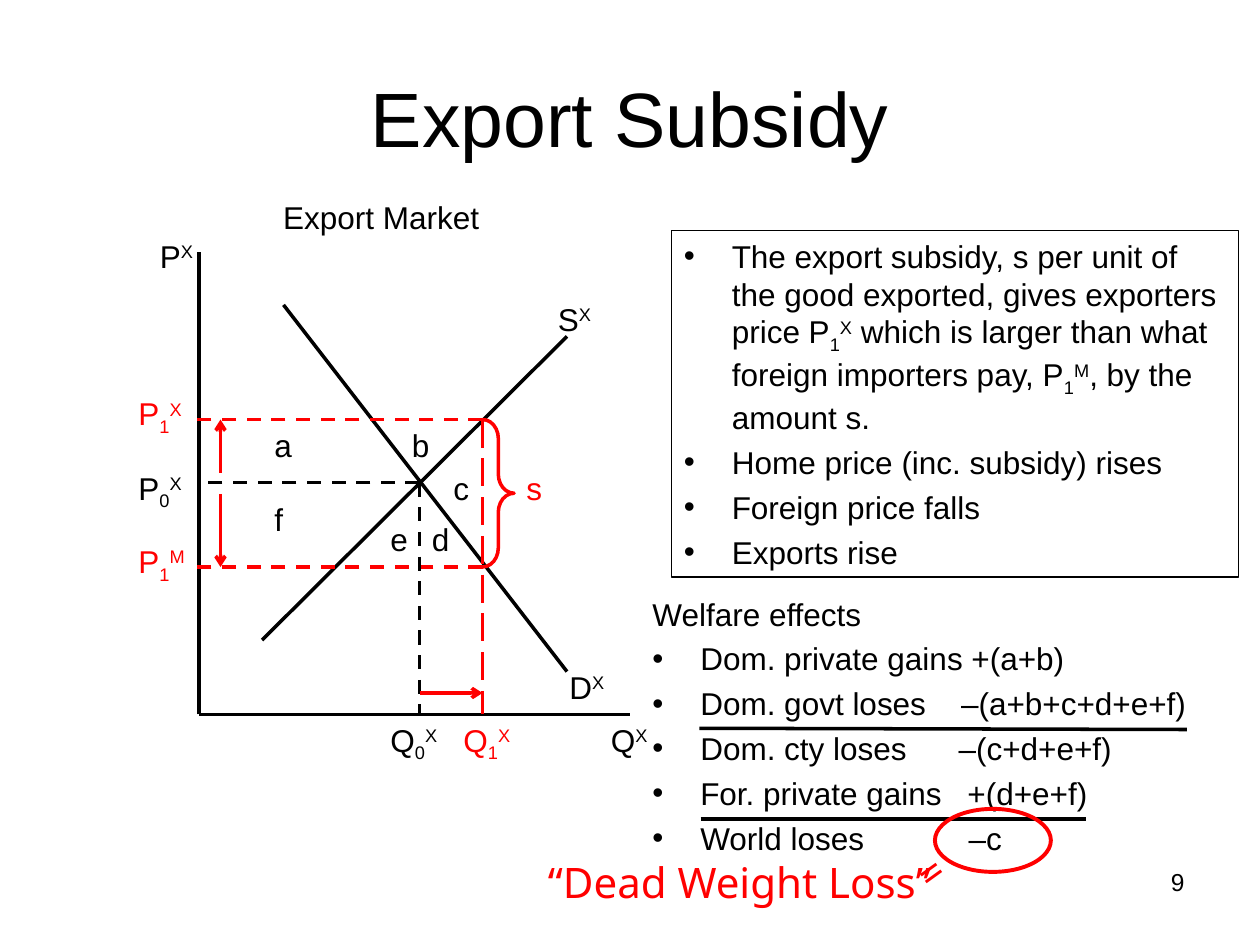
import lxml.etree
import pptx
import pptx.dml.color
import pptx.enum.dml
import pptx.enum.shapes
import pptx.enum.text
import pptx.oxml.ns
import pptx.util

Inches, Pt = pptx.util.Inches, pptx.util.Pt
qn = pptx.oxml.ns.qn
ALIGN = pptx.enum.text.PP_ALIGN
ANCHOR = pptx.enum.text.MSO_ANCHOR
DASH = pptx.enum.dml.MSO_LINE
SHAPE = pptx.enum.shapes.MSO_SHAPE
BLACK, RED = "000000", "FF0000"


def rgb(value):
    return pptx.dml.color.RGBColor.from_string(value)


def split_scripts(text):
    """Split "P_1^X" into (text, baseline) pairs; _ and ^ act on one character."""
    parts, plain, chars = [], "", iter(text)
    for ch in chars:
        if ch in "_^":
            parts += [(plain, None), (next(chars), "-25000" if ch == "_" else "30000")]
            plain = ""
        else:
            plain += ch
    return [part for part in parts + [(plain, None)] if part[0]]


class Slide:
    font, size = "Arial", 18

    def __init__(self, prs):
        self.s = prs.slides.add_slide(prs.slide_layouts[6])

    def add_runs(self, p, text, color=BLACK, size=None, font=None):
        for part, baseline in split_scripts(text):
            r = p.add_run()
            r.text = part
            r.font.name = font or self.font
            r.font.size = Pt(size or self.size)
            r.font.color.rgb = rgb(color)
            if baseline:
                r._r.get_or_add_rPr().set("baseline", baseline)

    def text(self, x, y, w, h, text, color=BLACK, size=None, font=None,
             align=ALIGN.LEFT, anchor=ANCHOR.TOP):
        sp = self.s.shapes.add_textbox(Inches(x), Inches(y), Inches(w), Inches(h))
        tf = sp.text_frame
        tf.word_wrap = True
        tf.vertical_anchor = anchor
        p = tf.paragraphs[0]
        p.alignment = align
        self.add_runs(p, text, color, size, font)
        return sp

    def bullets(self, x, y, w, h, items, heading=None):
        """Add a bulleted list; each item is (text, tab stop in inches or None)."""
        sp = self.text(x, y, w, h, heading or "")
        tf = sp.text_frame
        tf.paragraphs[0].space_before = Pt(4)
        for i, (text, tab) in enumerate(items):
            p = tf.paragraphs[0] if i == 0 and not heading else tf.add_paragraph()
            p.space_before = Pt(4)
            self.add_runs(p, text)
            pPr = p._p.get_or_add_pPr()
            pPr.set("marL", str(Inches(0.38)))
            pPr.set("indent", str(Inches(-0.38)))
            lxml.etree.SubElement(pPr, qn("a:buFont"), typeface=self.font)
            lxml.etree.SubElement(pPr, qn("a:buChar"), char="•")
            if tab:
                tabs = lxml.etree.SubElement(pPr, qn("a:tabLst"))
                lxml.etree.SubElement(tabs, qn("a:tab"), pos=str(Inches(tab)), algn="l")
        return sp

    def line(self, x1, y1, x2, y2, color=BLACK, dash=None, arrow=False):
        c = self.s.shapes.add_connector(
            pptx.enum.shapes.MSO_CONNECTOR.STRAIGHT,
            Inches(x1), Inches(y1), Inches(x2), Inches(y2))
        c.line.color.rgb = rgb(color)
        c.line.width = Pt(2)
        if dash:
            c.line.dash_style = dash
        if arrow:
            lxml.etree.SubElement(c.line._get_or_add_ln(), qn("a:tailEnd"), type="arrow")
        lxml.etree.SubElement(c._element.spPr, qn("a:effectLst"))

    def outline(self, kind, x, y, w, h, color, width):
        sp = self.s.shapes.add_shape(kind, Inches(x), Inches(y), Inches(w), Inches(h))
        sp.shadow.inherit = False
        sp.fill.background()
        sp.line.color.rgb = rgb(color)
        sp.line.width = Pt(width)
        return sp


def main():
    prs = pptx.Presentation()
    prs.slide_width, prs.slide_height = Inches(10), Inches(7.5)
    s = Slide(prs)

    s.text(0.5, 0.3, 9, 1.25, "Export Subsidy", size=44,
           align=ALIGN.CENTER, anchor=ANCHOR.MIDDLE)
    s.text(7.17, 6.83, 2.33, 0.52, "9", size=14, align=ALIGN.RIGHT)
    s.text(1.63, 1.52, 2.79, 0.4, "Export Market", align=ALIGN.CENTER)

    # Market diagram
    axis_x, axis_y = 1.58, 5.67
    q0, q1 = 3.33, 3.83
    p1x, p0, p1m = 3.33, 3.83, 4.5
    s.line(axis_x, axis_y, 5, axis_y)
    s.line(axis_x, axis_y, axis_x, 2)
    s.line(4.5, 2.67, 2.08, 5.08)
    s.line(4.5, 5.33, 2.25, 2.42)
    s.line(q0, p0, axis_x, p0, dash=DASH.DASH)
    for price in (p1x, p1m):
        s.line(q1, price, 1.5, price, RED, DASH.DASH)
    s.line(q1, p1x, q1, axis_y, RED, DASH.LONG_DASH)
    s.line(q0, p0, q0, axis_y, dash=DASH.DASH)
    s.line(q0, 5.5, q1, 5.5, RED, arrow=True)
    s.line(1.75, 3.75, 1.75, p1x, RED, arrow=True)
    s.line(1.75, 3.92, 1.75, p1m, RED, arrow=True)
    brace = s.outline(SHAPE.RIGHT_BRACE, q1, p1x, 0.25, p1m - p1x, RED, 2)
    brace.adjustments[0] = 0.604

    for x, y, w, label, color in (
            (1.17, 1.83, 0.75, "P^X", BLACK), (4.75, 5.67, 0.75, "Q^X", BLACK),
            (4.42, 5.25, 0.5, "D^X", BLACK), (4.33, 2.33, 0.5, "S^X", BLACK),
            (1, 3.08, 0.67, "P_1^X", RED), (1, 3.67, 0.67, "P_0^X", BLACK),
            (1, 4.25, 0.67, "P_1^M", RED), (3, 5.67, 0.67, "Q_0^X", BLACK),
            (3.58, 5.67, 0.67, "Q_1^X", RED), (4.08, 3.67, 0.67, "s", RED)):
        s.text(x, y, w, 0.4, label, color)
    for x, y, area in ((2.08, 3.33, "a"), (3.17, 3.33, "b"), (3.5, 3.67, "c"),
                       (3.33, 4.08, "d"), (3, 4.08, "e"), (2.08, 3.92, "f")):
        s.text(x, y, 0.33, 0.4, area)

    # Explanation and welfare effects
    box = s.bullets(5.33, 1.83, 4.5, 2.75, [
        ("The export subsidy, s per unit of the good exported, gives exporters price "
         "P_1^X which is larger than what foreign importers pay, P_1^M, by the amount s.",
         None),
        ("Home price (inc. subsidy) rises", None),
        ("Foreign price falls", None),
        ("Exports rise", None)])
    box.line.color.rgb = rgb(BLACK)
    box.line.width = Pt(0.75)
    s.bullets(5.08, 4.67, 4.5, 2.25, [
        ("Dom. private gains +(a+b)", None),
        ("Dom. govt loses\t–(a+b+c+d+e+f)", 2.45),
        ("Dom. cty loses\t–(c+d+e+f)", 2.43),
        ("For. private gains\t+(d+e+f)", 2.5),
        ("World loses\t–c", 2.51)], heading="Welfare effects")
    s.line(5.55, 5.78, 9.42, 5.79)
    s.line(5.56, 6.5, 8.62, 6.5)

    # Dead weight loss callout
    s.outline(SHAPE.OVAL, 7.42, 6.42, 0.92, 0.5, RED, 2.25)
    s.text(4.25, 6.75, 3.55, 0.5, "“Dead Weight Loss”", RED, 24, "Noto Sans")
    equals = s.text(7.19, 6.66, 0.42, 0.5, "=", RED, 24, "Noto Sans")
    equals.rotation = 324.2

    prs.save("out.pptx")


if __name__ == "__main__":
    main()
